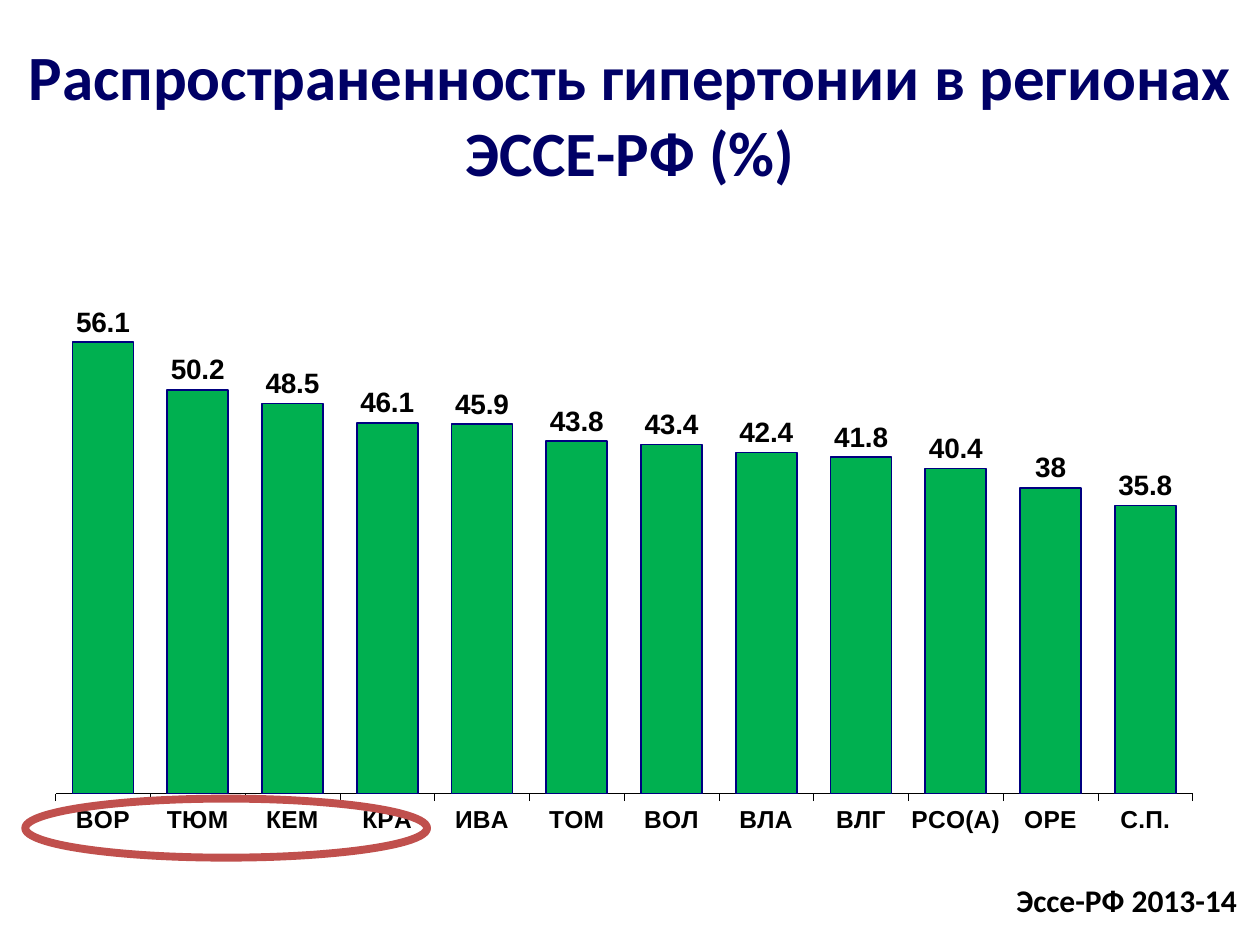
from typing import NamedTuple

from lxml.etree import SubElement
from pptx import Presentation
from pptx.chart.data import CategoryChartData
from pptx.dml.color import RGBColor
from pptx.enum.chart import XL_CHART_TYPE, XL_LABEL_POSITION, XL_TICK_LABEL_POSITION, XL_TICK_MARK
from pptx.enum.shapes import MSO_SHAPE
from pptx.enum.text import MSO_ANCHOR, MSO_AUTO_SIZE, PP_ALIGN
from pptx.oxml.ns import qn
from pptx.util import Cm, Pt

NAVY = RGBColor(0x00, 0x00, 0x66)
BAR_EDGE = RGBColor(0x00, 0x00, 0x80)
GREEN = RGBColor(0x00, 0xB0, 0x50)
RED = RGBColor(0xC0, 0x50, 0x4D)
BLACK = RGBColor(0x00, 0x00, 0x00)
WHITE = RGBColor(0xFF, 0xFF, 0xFF)


class Region(NamedTuple):
    name: str
    percent: float


REGIONS = [
    Region("ВОР", 56.1), Region("ТЮМ", 50.2), Region("КЕМ", 48.5),
    Region("КРА", 46.1), Region("ИВА", 45.9), Region("ТОМ", 43.8),
    Region("ВОЛ", 43.4), Region("ВЛА", 42.4), Region("ВЛГ", 41.8),
    Region("РСО(А)", 40.4), Region("ОРЕ", 38), Region("С.П.", 35.8),
]


def set_font(font, size: float, color: RGBColor = BLACK, name: str = "Arial") -> None:
    font.name, font.size, font.bold = name, Pt(size), True
    font.color.rgb = color


def set_line(line, color: RGBColor, width: float) -> None:
    line.color.rgb = color
    line.width = Pt(width)


def write(tf, text: str, *, size: float, color: RGBColor = BLACK,
          align: PP_ALIGN = PP_ALIGN.LEFT, anchor: MSO_ANCHOR = MSO_ANCHOR.TOP,
          wrap: bool = True, auto_size: MSO_AUTO_SIZE = MSO_AUTO_SIZE.NONE) -> None:
    tf.word_wrap, tf.auto_size, tf.vertical_anchor = wrap, auto_size, anchor
    p = tf.paragraphs[0]
    p.alignment = align
    r = p.add_run()
    r.text = text
    set_font(r.font, size, color, "Calibri")


def place_plot(chart, x: float, y: float, w: float, h: float) -> None:
    """Fix the inner plot area, in fractions of the chart."""
    plot_area = chart._chartSpace.chart.plotArea
    layout = plot_area.find(qn("c:layout"))
    if layout is None:
        layout = SubElement(plot_area, qn("c:layout"))
        plot_area.insert(0, layout)
    manual = SubElement(layout, qn("c:manualLayout"))
    for tag, value in [("layoutTarget", "inner"), ("xMode", "edge"), ("yMode", "edge"),
                       ("x", x), ("y", y), ("w", w), ("h", h)]:
        SubElement(manual, qn(f"c:{tag}")).set("val", str(value))


def add_region_chart(s, regions: list[Region]) -> None:
    data = CategoryChartData()
    data.categories = [region.name for region in regions]
    data.add_series("Series 1", [region.percent for region in regions])
    chart = s.shapes.add_chart(XL_CHART_TYPE.COLUMN_CLUSTERED, Cm(0.84), Cm(4.95),
                               Cm(23.44), Cm(12.32), data).chart
    chart.has_legend = chart.has_title = False
    set_font(chart.font, 18)
    place_plot(chart, 0.012, 0.107, 0.978, 0.79)

    category = chart.category_axis
    category.major_tick_mark = XL_TICK_MARK.OUTSIDE
    category.tick_label_position = XL_TICK_LABEL_POSITION.LOW
    set_font(category.tick_labels.font, 14)
    set_line(category.format.line, BLACK, 0.25)

    value = chart.value_axis
    value.minimum_scale, value.maximum_scale = 0, 60
    value.visible = False
    set_line(value.major_gridlines.format.line, WHITE, 1)

    plot = chart.plots[0]
    plot.gap_width = 55
    plot.vary_by_categories = False
    bars = plot.series[0]
    bars.format.fill.solid()
    bars.format.fill.fore_color.rgb = GREEN
    set_line(bars.format.line, BAR_EDGE, 1)
    labels = bars.data_labels
    labels.show_value = True
    labels.position = XL_LABEL_POSITION.OUTSIDE_END
    set_font(labels.font, 16)


def main() -> None:
    prs = Presentation()
    prs.slide_width, prs.slide_height = Cm(25.4), Cm(19.05)
    s = prs.slides.add_slide(prs.slide_layouts[5])

    title = s.shapes.title
    title.left, title.top, title.width, title.height = Cm(0), Cm(0), Cm(25.4), Cm(4.57)
    write(title.text_frame, "Распространенность гипертонии в регионах ЭССЕ-РФ (%)",
          size=36, color=NAVY, align=PP_ALIGN.CENTER, anchor=MSO_ANCHOR.MIDDLE)

    add_region_chart(s, REGIONS)

    source = s.shapes.add_textbox(Cm(20.24), Cm(17.63), Cm(5), Cm(1.02))
    write(source.text_frame, "Эссе-РФ 2013-14", size=18, wrap=False,
          auto_size=MSO_AUTO_SIZE.SHAPE_TO_FIT_TEXT)

    highlight = s.shapes.add_shape(MSO_SHAPE.OVAL, Cm(0.51), Cm(16.1), Cm(8.1), Cm(1.19))
    highlight.shadow.inherit = False
    highlight.fill.background()
    set_line(highlight.line, RED, 4.5)

    prs.save("out.pptx")


if __name__ == "__main__":
    main()
